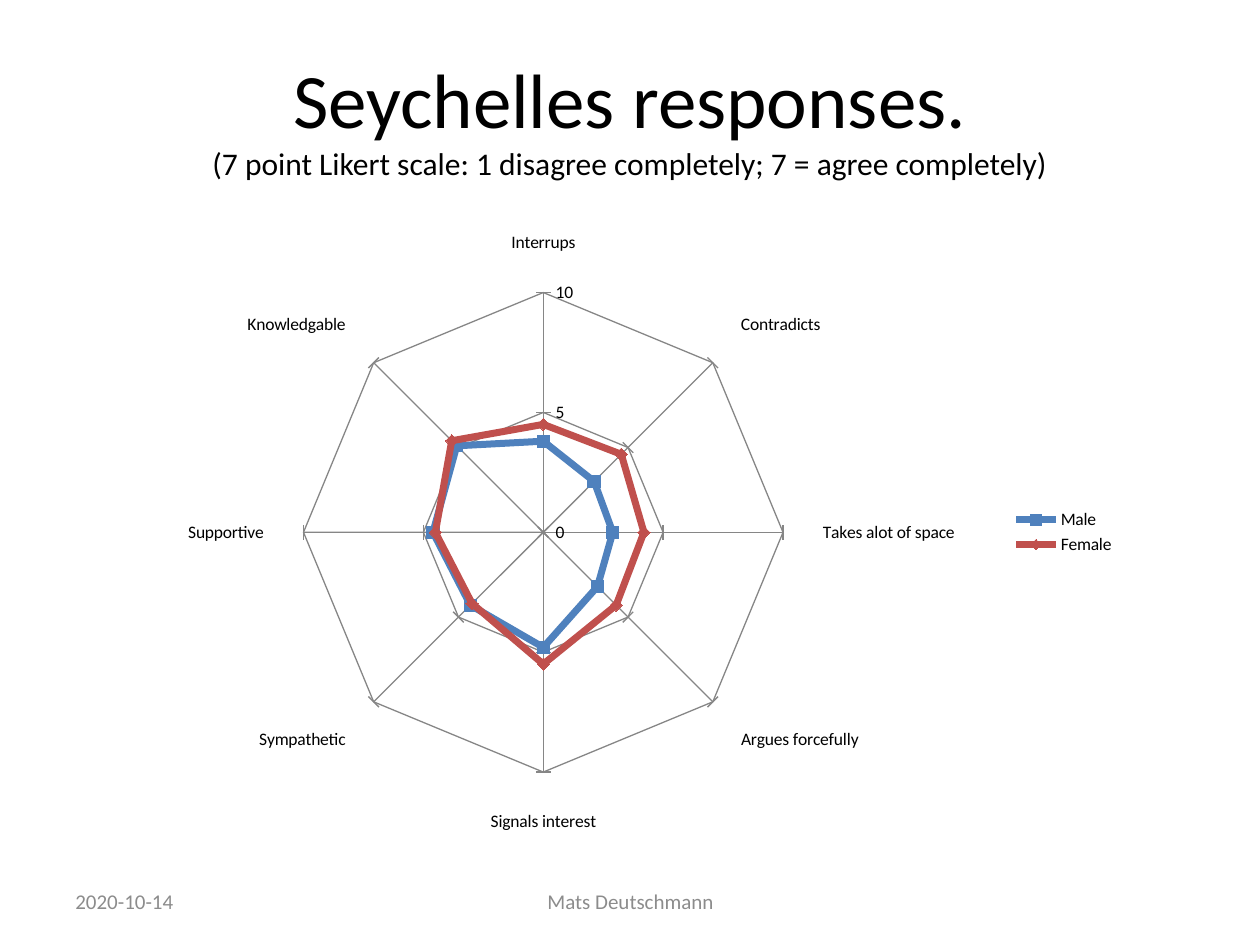
"""Build the slide with the Seychelles radar chart."""
from pptx import Presentation
from pptx.chart.data import CategoryChartData
from pptx.dml.color import RGBColor
from pptx.enum import chart as ch, text as tx
from pptx.util import Inches, Pt

FONT = "Calibri"
COLORS = {"ink": "000000", "muted": "8C8C8C", "grid": "868686",
          "Male": "4F81BD", "Female": "C0504D"}
TRAITS = ["Interrups", "Contradicts", "Takes alot of space", "Argues forcefully",
          "Signals interest", "Sympathetic", "Supportive", "Knowledgable"]
SCORES = {"Male": [3.8, 3, 2.9, 3.2, 4.8, 4.3, 4.6, 5.1],
          "Female": [4.5, 4.6, 4.2, 4.3, 5.5, 4.2, 4.5, 5.4]}
MARKS = {"Male": ch.XL_MARKER_STYLE.SQUARE, "Female": ch.XL_MARKER_STYLE.DIAMOND}


def color(name):
    return RGBColor.from_string(COLORS[name])


def style(font, size, name):
    font.name = FONT
    font.size = Pt(size)
    font.color.rgb = color(name)


def paint(line, name, width):
    line.color.rgb = color(name)
    line.width = Pt(width)


def set_title(slide, head, note):
    title = slide.shapes.title
    title.left, title.top = Inches(0.5), Inches(0.3)
    title.width, title.height = Inches(9), Inches(1.25)
    frame = title.text_frame
    frame.vertical_anchor = tx.MSO_ANCHOR.MIDDLE
    para = frame.paragraphs[0]
    para.alignment = tx.PP_ALIGN.CENTER
    style(para.font, 44, "ink")
    first = para.add_run()
    first.text = head
    style(first.font, 44, "ink")
    para.add_line_break()
    second = para.add_run()
    second.text = note
    style(second.font, 18, "ink")


def add_foot(slide, words, left, width, align):
    box = slide.shapes.add_textbox(Inches(left), Inches(6.95), Inches(width), Inches(0.4))
    frame = box.text_frame
    frame.word_wrap = True
    frame.vertical_anchor = tx.MSO_ANCHOR.MIDDLE
    para = frame.paragraphs[0]
    para.text = words
    para.alignment = align
    style(para.font, 12, "muted")


def add_radar(slide):
    data = CategoryChartData(number_format="General")
    data.categories = TRAITS
    for name, vals in SCORES.items():
        data.add_series(name, vals)
    chart = slide.shapes.add_chart(
        ch.XL_CHART_TYPE.RADAR_MARKERS, Inches(1.05), Inches(1.75),
        Inches(7.9), Inches(4.95), data).chart
    style(chart.font, 10, "ink")
    chart.has_title = False
    chart.has_legend = True
    chart.legend.position = ch.XL_LEGEND_POSITION.RIGHT
    chart.legend.include_in_layout = False
    for axis in (chart.category_axis, chart.value_axis):
        axis.has_major_gridlines = True
        axis.major_tick_mark = ch.XL_TICK_MARK.OUTSIDE
        paint(axis.major_gridlines.format.line, "grid", 0.75)
        paint(axis.format.line, "grid", 0.75)
    scale = chart.value_axis
    scale.minimum_scale, scale.maximum_scale, scale.major_unit = 0, 10, 5
    scale.major_tick_mark = ch.XL_TICK_MARK.CROSS
    scale.tick_labels.number_format = "General"
    scale.tick_labels.number_format_is_linked = False
    for line in chart.plots[0].series:
        line.smooth = False
        paint(line.format.line, line.name, 4)
        mark = line.marker
        mark.style, mark.size = MARKS[line.name], 7
        mark.format.fill.solid()
        mark.format.fill.fore_color.rgb = color(line.name)
        paint(mark.format.line, line.name, 0.75)


def main():
    deck = Presentation()
    deck.slide_width, deck.slide_height = Inches(10), Inches(7.5)
    slide = deck.slides.add_slide(deck.slide_layouts[5])
    set_title(slide, "Seychelles responses.",
              "(7 point Likert scale: 1 disagree completely; 7 = agree completely)")
    add_radar(slide)
    add_foot(slide, "2020-10-14", 0.5, 2.33, tx.PP_ALIGN.LEFT)
    add_foot(slide, "Mats Deutschmann", 3.42, 3.17, tx.PP_ALIGN.CENTER)
    deck.save("out.pptx")


if __name__ == "__main__":
    main()
